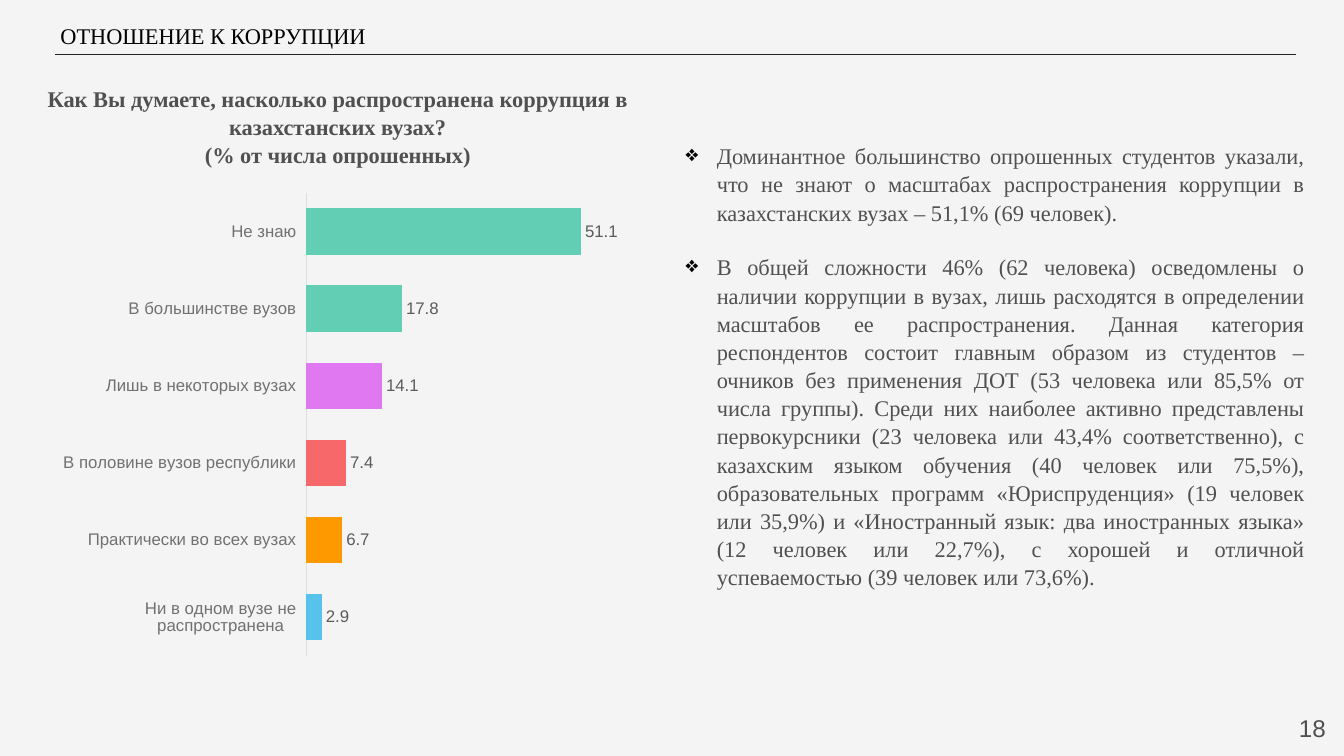
from lxml import etree
from pptx import Presentation
from pptx.chart.data import CategoryChartData
from pptx.dml.color import RGBColor
from pptx.enum.chart import XL_CHART_TYPE, XL_LABEL_POSITION, XL_TICK_LABEL_POSITION, XL_TICK_MARK
from pptx.enum.shapes import MSO_CONNECTOR
from pptx.enum.text import MSO_ANCHOR, PP_ALIGN
from pptx.oxml import parse_xml
from pptx.oxml.ns import nsdecls, qn
from pptx.util import Inches, Pt

BAR = XL_CHART_TYPE.BAR_CLUSTERED
OUTSIDE_END = XL_LABEL_POSITION.OUTSIDE_END
LABELS_LOW = XL_TICK_LABEL_POSITION.LOW
NO_TICK = XL_TICK_MARK.NONE
STRAIGHT = MSO_CONNECTOR.STRAIGHT
TOP = MSO_ANCHOR.TOP
LEFT, CENTER, RIGHT, JUSTIFY = PP_ALIGN.LEFT, PP_ALIGN.CENTER, PP_ALIGN.RIGHT, PP_ALIGN.JUSTIFY

SERIF, SANS = "Times New Roman", "Arial"
COLORS = {
    "background": "F4F4F4", "black": "000000", "rule": "242424", "body": "505050",
    "category": "717171", "value": "5B5B5B", "axis": "DEDEDE",
    "blue": "57C2EC", "orange": "FF9900", "red": "F7686B", "violet": "E078F1", "green": "62CFB5",
}
ANSWERS = [
    ("Ни в одном вузе не распространена", 2.9, "blue"),
    ("Практически во всех вузах", 6.7, "orange"),
    ("В половине вузов республики", 7.4, "red"),
    ("Лишь в некоторых вузах", 14.1, "violet"),
    ("В большинстве вузов", 17.8, "green"),
    ("Не знаю", 51.1, "green"),
]
QUESTION = [
    "Как Вы думаете, насколько распространена коррупция в казахстанских вузах?",
    "(% от числа опрошенных)",
]
FINDINGS = [
    "Доминантное большинство опрошенных студентов указали, что не знают о масштабах "
    "распространения коррупции в казахстанских вузах – 51,1% (69 человек).",
    "В общей сложности 46% (62 человека) осведомлены о наличии коррупции в вузах, лишь "
    "расходятся в определении масштабов ее распространения. Данная категория респондентов "
    "состоит главным образом из студентов – очников без применения ДОТ (53 человека или 85,5% "
    "от числа группы). Среди них наиболее активно представлены первокурсники (23 человека или "
    "43,4% соответственно), с казахским языком обучения (40 человек или 75,5%), образовательных "
    "программ «Юриспруденция» (19 человек или 35,9%) и «Иностранный язык: два иностранных языка» "
    "(12 человек или 22,7%), с хорошей и отличной успеваемостью (39 человек или 73,6%).",
]


def rgb(name):
    return RGBColor.from_string(COLORS[name])


def set_font(font, name, size, color, bold=False):
    font.name, font.size, font.bold = name, Pt(size), bold
    font.color.rgb = rgb(color)


def fill_text(tf, texts, align, name, size, color, bold=False, inset=0.13):
    tf.word_wrap = True
    tf.vertical_anchor = TOP
    tf.margin_left = tf.margin_right = Inches(inset)
    tf.margin_top = tf.margin_bottom = Inches(min(inset, 0.13))
    for i, text in enumerate(texts):
        p = tf.paragraphs[0] if i == 0 else tf.add_paragraph()
        p.text = text
        p.alignment = align
        p.line_spacing = 1.05
        set_font(p.font, name, size, color, bold)


def add_text(s, box, texts, align, name, size, color, bold=False):
    tf = s.shapes.add_textbox(*map(Inches, box)).text_frame
    fill_text(tf, texts, align, name, size, color, bold)
    return tf


def add_bullet(p):
    pPr = p._p.get_or_add_pPr()
    pPr.set("marL", str(Inches(0.31)))
    pPr.set("indent", str(-Inches(0.31)))
    bullet = (
        f'<a:buClr {nsdecls("a")}><a:srgbClr val="{COLORS["black"]}"/></a:buClr>',
        f'<a:buChar {nsdecls("a")} char="❖"/>',
    )
    for index, xml in enumerate(bullet):
        pPr.insert_element_before(parse_xml(xml), *("a:buChar", "a:defRPr")[index:])


def add_heading(s, text):
    title = s.shapes.title
    title.left, title.top, title.width, title.height = map(Inches, (0.5, 0.16, 12.63, 0.37))
    fill_text(title.text_frame, [text], LEFT, SERIF, 16, "black", inset=0.1)
    title.text_frame.margin_top = title.text_frame.margin_bottom = Inches(0.05)


def add_rule(s, x1, x2, y):
    line = s.shapes.add_connector(STRAIGHT, Inches(x1), Inches(y), Inches(x2), Inches(y))
    line.line.color.rgb = rgb("rule")
    line.line.width = Pt(0.75)
    etree.SubElement(line._element.spPr, qn("a:effectLst"))


def set_plot_area(chart, x, y, w, h):
    plot_area = chart._chartSpace.chart.plotArea
    for old in plot_area.findall(qn("c:layout")):
        plot_area.remove(old)
    places = "".join(f'<c:{tag} val="{val}"/>' for tag, val in zip("xywh", (x, y, w, h)))
    plot_area.insert(0, parse_xml(
        f'<c:layout {nsdecls("c")}><c:manualLayout><c:layoutTarget val="inner"/>'
        f'<c:xMode val="edge"/><c:yMode val="edge"/>{places}</c:manualLayout></c:layout>'))


def add_answers_chart(s, box):
    data = CategoryChartData(number_format="0.0")
    data.categories = [name for name, _, _ in ANSWERS]
    data.add_series("Series 1", [value for _, value, _ in ANSWERS])
    chart = s.shapes.add_chart(BAR, *map(Inches, box), data).chart
    chart.has_legend = chart.has_title = False
    set_font(chart.font, SANS, 12, "rule")
    set_plot_area(chart, 0.46, 0, 0.53, 0.94)

    axis = chart.category_axis
    axis.major_tick_mark = axis.minor_tick_mark = NO_TICK
    axis.tick_label_position = LABELS_LOW
    axis.format.line.color.rgb = rgb("axis")
    axis.format.line.width = Pt(0.75)
    set_font(axis.tick_labels.font, SANS, 12, "category")

    scale = chart.value_axis
    scale.minimum_scale, scale.maximum_scale = 0, 60
    scale.has_major_gridlines = False
    scale.visible = False

    plot = chart.plots[0]
    plot.gap_width = 66
    plot.vary_by_categories = False
    plot.has_data_labels = True
    labels = plot.data_labels
    labels.show_value = True
    labels.position = OUTSIDE_END
    set_font(labels.font, SANS, 12, "value")
    for i, (_, _, color) in enumerate(ANSWERS):
        fill = plot.series[0].points[i].format.fill
        fill.solid()
        fill.fore_color.rgb = rgb(color)


def main():
    prs = Presentation()
    prs.slide_width, prs.slide_height = Inches(13.33), Inches(7.5)
    s = prs.slides.add_slide(prs.slide_layouts[5])
    s.background.fill.solid()
    s.background.fill.fore_color.rgb = rgb("background")

    add_rule(s, 0.55, 12.85, 0.54)
    add_heading(s, "ОТНОШЕНИЕ К КОРРУПЦИИ")
    add_text(s, (0.26, 0.7, 6.18, 1.08), QUESTION, CENTER, SERIF, 16, "body", bold=True)
    add_answers_chart(s, (0.26, 1.91, 6.04, 4.89))
    tf = add_text(s, (6.67, 1.27, 6.4, 6.08), FINDINGS, JUSTIFY, SERIF, 16, "body")
    for p in tf.paragraphs:
        add_bullet(p)
    tf.paragraphs[0].space_after = Pt(19)
    add_text(s, (12.48, 6.93, 0.8, 0.57), ["18"], RIGHT, SANS, 17.3, "body")
    prs.save("out.pptx")


if __name__ == "__main__":
    main()
